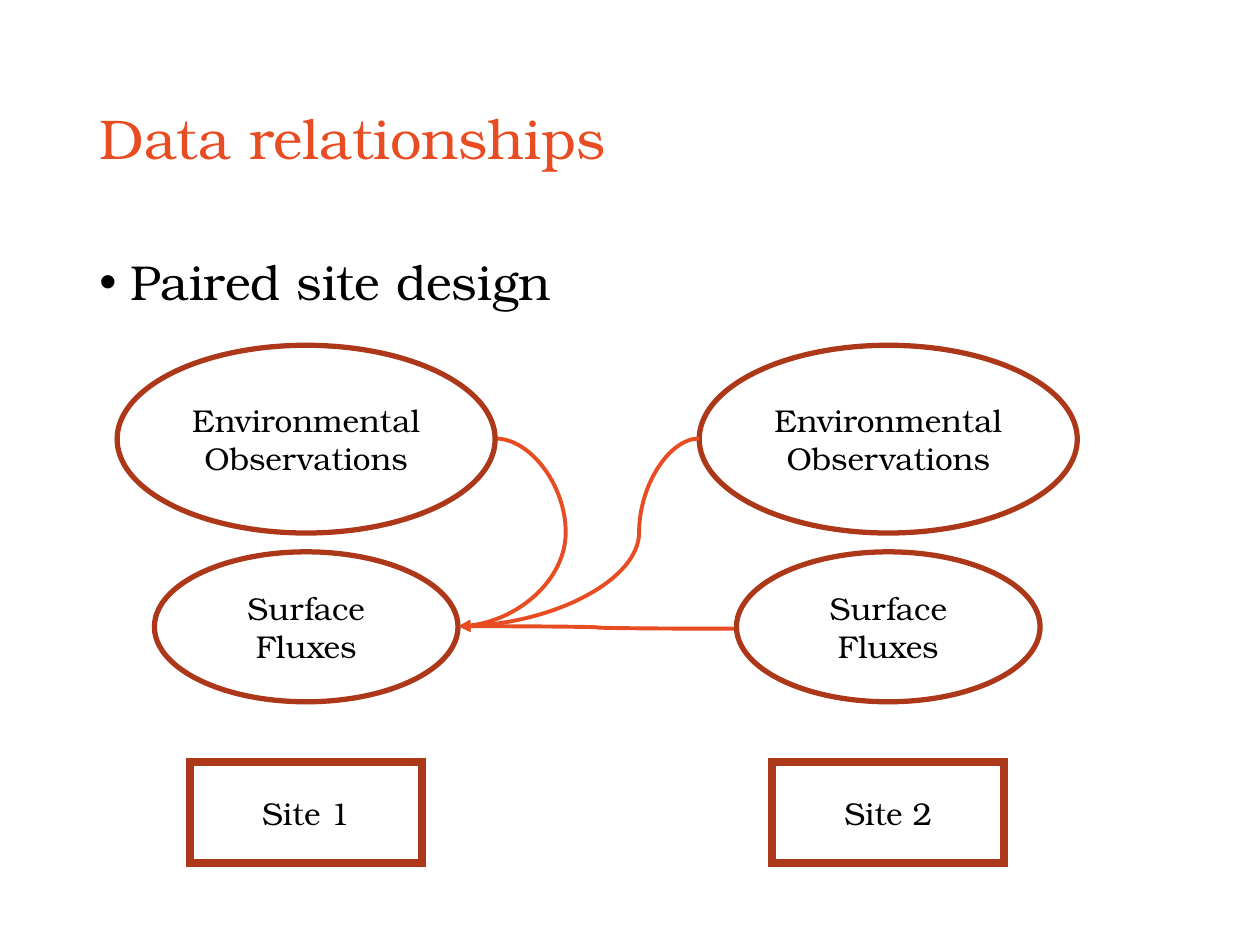
from pptx import Presentation
from pptx.dml.color import RGBColor
from pptx.enum.shapes import MSO_CONNECTOR, MSO_SHAPE
from pptx.enum.text import MSO_ANCHOR, PP_ALIGN
from pptx.oxml.ns import qn
from pptx.util import Inches, Pt
from lxml import etree

ORANGE = RGBColor(0xE8, 0x4C, 0x22)
RUST = RGBColor(0xAC, 0x38, 0x19)
BLACK = RGBColor(0, 0, 0)
FONT = "TeX Gyre Bonum"
ELLIPSE, RECT = MSO_SHAPE.OVAL, MSO_SHAPE.RECTANGLE
CURVE = MSO_CONNECTOR.CURVE
TOP, MIDDLE = MSO_ANCHOR.TOP, MSO_ANCHOR.MIDDLE
CENTER = PP_ALIGN.CENTER


def add_xml(parent, tag, **attrs):
    return etree.SubElement(parent, qn(tag), attrs)


class SlideBuilder:
    def __init__(self, slide):
        self.slide = slide

    def fill_text(self, sp, text, anchor, size, color, bullet=False, **paragraph_format):
        tf = sp.text_frame
        tf.word_wrap = True
        tf.vertical_anchor = anchor
        p = tf.paragraphs[0]
        for name, value in paragraph_format.items():
            setattr(p, name, value)
        if bullet:
            pPr = p._p.get_or_add_pPr()
            pPr.set("marL", str(Inches(0.25)))
            pPr.set("indent", str(Inches(-0.25)))
            add_xml(pPr, "a:buFont", typeface="Arial")
            add_xml(pPr, "a:buChar", char="•")
        r = p.add_run()
        r.text = text
        for name, value in {"name": FONT, "size": Pt(size)}.items():
            setattr(r.font, name, value)
        r.font.color.rgb = color

    def text(self, box, text, anchor, size, color, bullet=False):
        sp = self.slide.shapes.add_textbox(*map(Inches, box))
        self.fill_text(sp, text, anchor, size, color, bullet, line_spacing=0.9)

    def node(self, kind, box, text, width):
        sp = self.slide.shapes.add_shape(kind, *map(Inches, box))
        sp.shadow.inherit = False
        sp.fill.background()
        sp.line.color.rgb = RUST
        sp.line.width = Pt(width)
        add_xml(sp._element.spPr.find(qn("a:ln")), "a:miter", lim="800000")
        self.fill_text(sp, text, MIDDLE, 18, BLACK, alignment=CENTER)

    def arrow(self, start, end, bend=0.5):
        """Curved arrow; bend is where it turns, as a share of its width."""
        cn = self.slide.shapes.add_connector(CURVE, *map(Inches, start + end))
        cn.line.color.rgb = ORANGE
        cn.line.width = Pt(2.25)
        spPr = cn._element.spPr
        add_xml(spPr.find(qn("a:ln")), "a:tailEnd", type="triangle")
        add_xml(spPr, "a:effectLst")
        guides = spPr.find(qn("a:prstGeom")).find(qn("a:avLst"))
        add_xml(guides, "a:gd", name="adj1", fmla=f"val {round(bend * 100000)}")


def main():
    prs = Presentation()
    prs.slide_width, prs.slide_height = Inches(10), Inches(7.5)
    s = SlideBuilder(prs.slides.add_slide(prs.slide_layouts[6]))

    # Title and bullet
    s.text((0.69, 0.4, 8.62, 1.45), "Data relationships", MIDDLE, 32, ORANGE)
    s.text((0.69, 2, 8.62, 4.76), "Paired site design", TOP, 28, BLACK, bullet=True)

    # Arrows into the fluxes of site 1
    fluxes = (3.64, 4.97)
    s.arrow((3.93, 3.48), fluxes, bend=-1.93)
    s.arrow((5.85, 4.99), fluxes)

    # One column of nodes per site, centred on a common axis
    nodes = [
        (ELLIPSE, 2.74, 3, 1.49, "Environmental Observations", 3),
        (ELLIPSE, 4.38, 2.41, 1.19, "Surface Fluxes", 3),
        (RECT, 6.05, 1.84, 0.8, "Site {}", 4.5),
    ]
    for site, center in enumerate((2.43, 7.05), start=1):
        for kind, top, width, height, label, line in nodes:
            box = (center - width / 2, top, width, height)
            s.node(kind, box, label.format(site), line)

    # Arrow from the observations of site 2, in front
    s.arrow((5.55, 3.48), fluxes, bend=0.25)

    prs.save("out.pptx")


if __name__ == "__main__":
    main()
